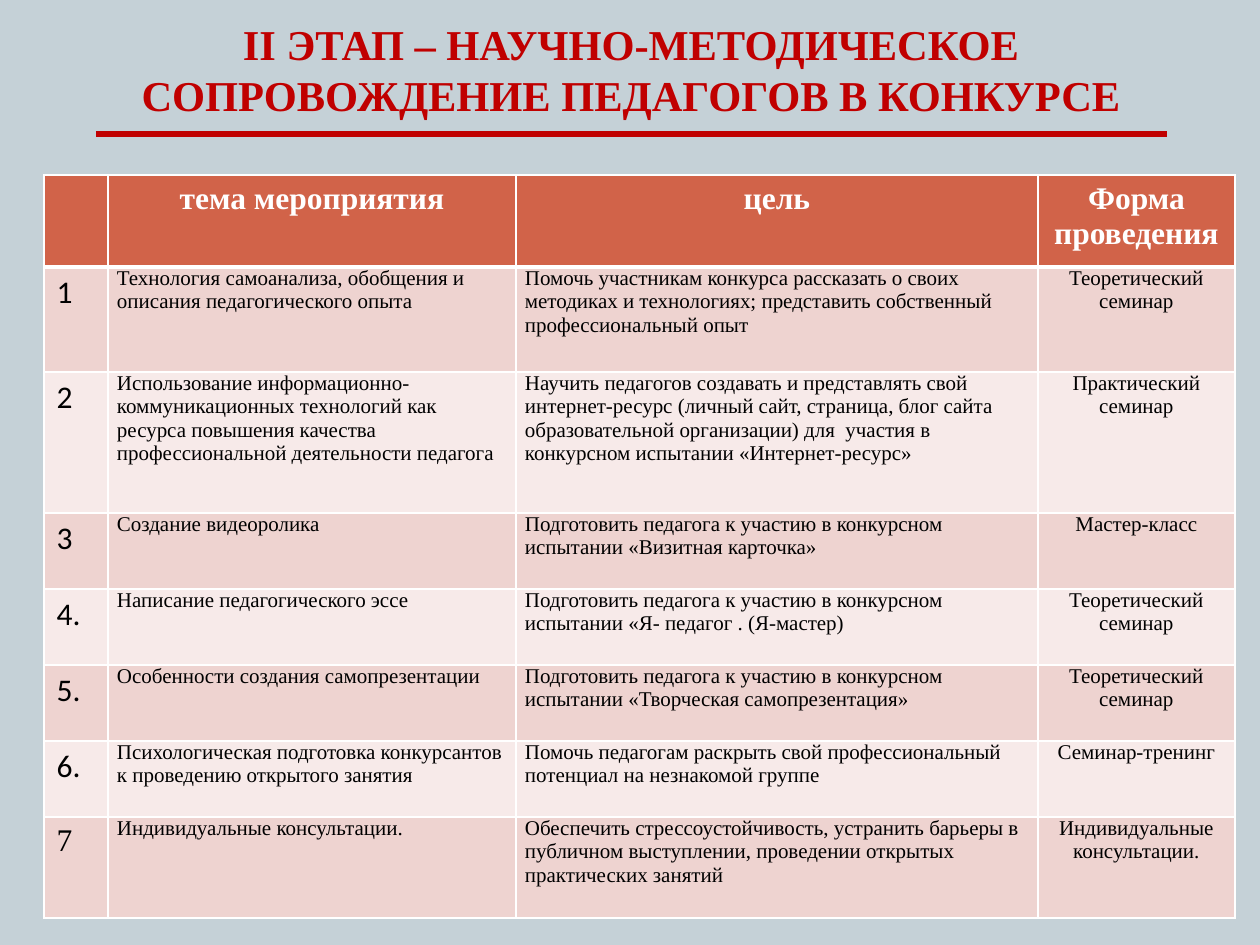
from lxml.etree import SubElement
from pptx import Presentation
from pptx.dml.color import RGBColor
from pptx.enum.shapes import MSO_CONNECTOR
from pptx.enum.text import MSO_ANCHOR, PP_ALIGN
from pptx.oxml.ns import qn
from pptx.util import Pt

PX = 914400 // 126
SERIF, SANS = "Times New Roman", "Calibri"
RED, HEADER_FILL, WHITE, BLACK = "C00000", "D16349", "FFFFFF", "000000"
BAND_FILLS = ("EED3D0", "F7EAE9")
COLUMN_WIDTHS = (64, 408, 522, 197)
ROW_HEIGHTS = (92, 105, 141, 76, 76, 76, 76, 101)

TITLE = "II ЭТАП – НАУЧНО-МЕТОДИЧЕСКОЕ СОПРОВОЖДЕНИЕ ПЕДАГОГОВ В КОНКУРСЕ"
HEADINGS = ("", "тема мероприятия", "цель", "Форма проведения")
EVENTS = (
    ("1", "Технология самоанализа, обобщения и\nописания педагогического опыта",
     "Помочь участникам конкурса рассказать о своих методиках и технологиях; "
     "представить собственный\nпрофессиональный опыт",
     "Теоретический семинар"),
    ("2", "Использование информационно-\nкоммуникационных технологий как ресурса "
     "повышения качества профессиональной деятельности педагога",
     "Научить педагогов создавать и представлять свой интернет-ресурс (личный сайт, "
     "страница, блог сайта образовательной организации) для  участия в конкурсном "
     "испытании «Интернет-ресурс»",
     "Практический семинар"),
    ("3", "Создание видеоролика",
     "Подготовить педагога к участию в конкурсном испытании «Визитная карточка»",
     "Мастер-класс"),
    ("4.", "Написание педагогического эссе",
     "Подготовить педагога к участию в конкурсном испытании «Я- педагог . (Я-мастер)",
     "Теоретический семинар"),
    ("5.", "Особенности создания самопрезентации",
     "Подготовить педагога к участию в конкурсном испытании «Творческая самопрезентация»",
     "Теоретический семинар"),
    ("6.", "Психологическая подготовка конкурсантов к проведению открытого занятия",
     "Помочь педагогам раскрыть свой профессиональный потенциал на незнакомой группе",
     "Семинар-тренинг"),
    ("7", "Индивидуальные консультации.",
     "Обеспечить стрессоустойчивость, устранить барьеры в публичном выступлении, "
     "проведении открытых\nпрактических занятий",
     "Индивидуальные\nконсультации."),
)


def px(length):
    return length * PX


def color(code):
    return RGBColor.from_string(code)


def write(frame, text, size=12, font=SERIF, ink=BLACK, bold=False,
          align=PP_ALIGN.LEFT, spacing=None):
    """Fill a text frame, one paragraph for each line of text."""
    frame.word_wrap = True
    frame.text = text
    for paragraph in frame.paragraphs:
        paragraph.alignment = align
        if spacing:
            paragraph.line_spacing = Pt(spacing)
        paragraph.font.size = Pt(size)
        for run in paragraph.runs:
            run.font.name = font
            run.font.size = Pt(size)
            run.font.bold = bold
            run.font.color.rgb = color(ink)


def add_title(slide):
    frame = slide.shapes.add_textbox(px(64), px(18), px(1134), px(102)).text_frame
    frame.margin_top = frame.margin_bottom = 0
    frame.vertical_anchor = MSO_ANCHOR.MIDDLE
    write(frame, TITLE, size=24.3, ink=RED, bold=True,
          align=PP_ALIGN.CENTER, spacing=29)


def add_rule(slide):
    rule = slide.shapes.add_connector(
        MSO_CONNECTOR.STRAIGHT, px(96), px(134), px(1167), px(134))
    rule.line.color.rgb = color(RED)
    rule.line.width = Pt(3)
    SubElement(rule._element.spPr, qn("a:effectLst"))


def style_cell(cell, fill, top=1, bottom=1):
    """Set white borders, with widths in points, and then the fill."""
    properties = cell._tc.get_or_add_tcPr()
    for side, width in (("L", 1), ("R", 1), ("T", top), ("B", bottom)):
        border = SubElement(properties, qn(f"a:ln{side}"), w=str(Pt(width)))
        solid = SubElement(border, qn("a:solidFill"))
        SubElement(solid, qn("a:srgbClr"), val=WHITE)
    cell.fill.solid()
    cell.fill.fore_color.rgb = color(fill)


def fill_event_row(table, row, event):
    for column, text in enumerate(event):
        cell = table.cell(row, column)
        style_cell(cell, BAND_FILLS[(row - 1) % 2], top=3 if row == 1 else 1)
        if column == 0:
            last = row == len(EVENTS)
            write(cell.text_frame, text, size=18, font=SERIF if last else SANS)
            continue
        cell.margin_left = cell.margin_right = px(9)
        cell.margin_top = cell.margin_bottom = 0
        form = column == len(event) - 1
        write(cell.text_frame, text,
              align=PP_ALIGN.CENTER if form else PP_ALIGN.LEFT)


def add_events_table(slide):
    table = slide.shapes.add_table(
        len(ROW_HEIGHTS), len(COLUMN_WIDTHS), px(44), px(175),
        px(sum(COLUMN_WIDTHS)), px(sum(ROW_HEIGHTS))).table
    for column, width in zip(table.columns, COLUMN_WIDTHS):
        column.width = px(width)
    for row, height in zip(table.rows, ROW_HEIGHTS):
        row.height = px(height)
    for column, heading in enumerate(HEADINGS):
        cell = table.cell(0, column)
        style_cell(cell, HEADER_FILL, bottom=3)
        write(cell.text_frame, heading, size=18, ink=WHITE, bold=True,
              align=PP_ALIGN.CENTER)
    for row, event in enumerate(EVENTS, start=1):
        fill_event_row(table, row, event)


def main():
    deck = Presentation()
    deck.slide_width, deck.slide_height = px(1260), px(945)
    slide = deck.slides.add_slide(deck.slide_layouts[6])
    slide.background.fill.solid()
    slide.background.fill.fore_color.rgb = color("C5D1D7")
    add_title(slide)
    add_events_table(slide)
    add_rule(slide)
    deck.save("out.pptx")


if __name__ == "__main__":
    main()
